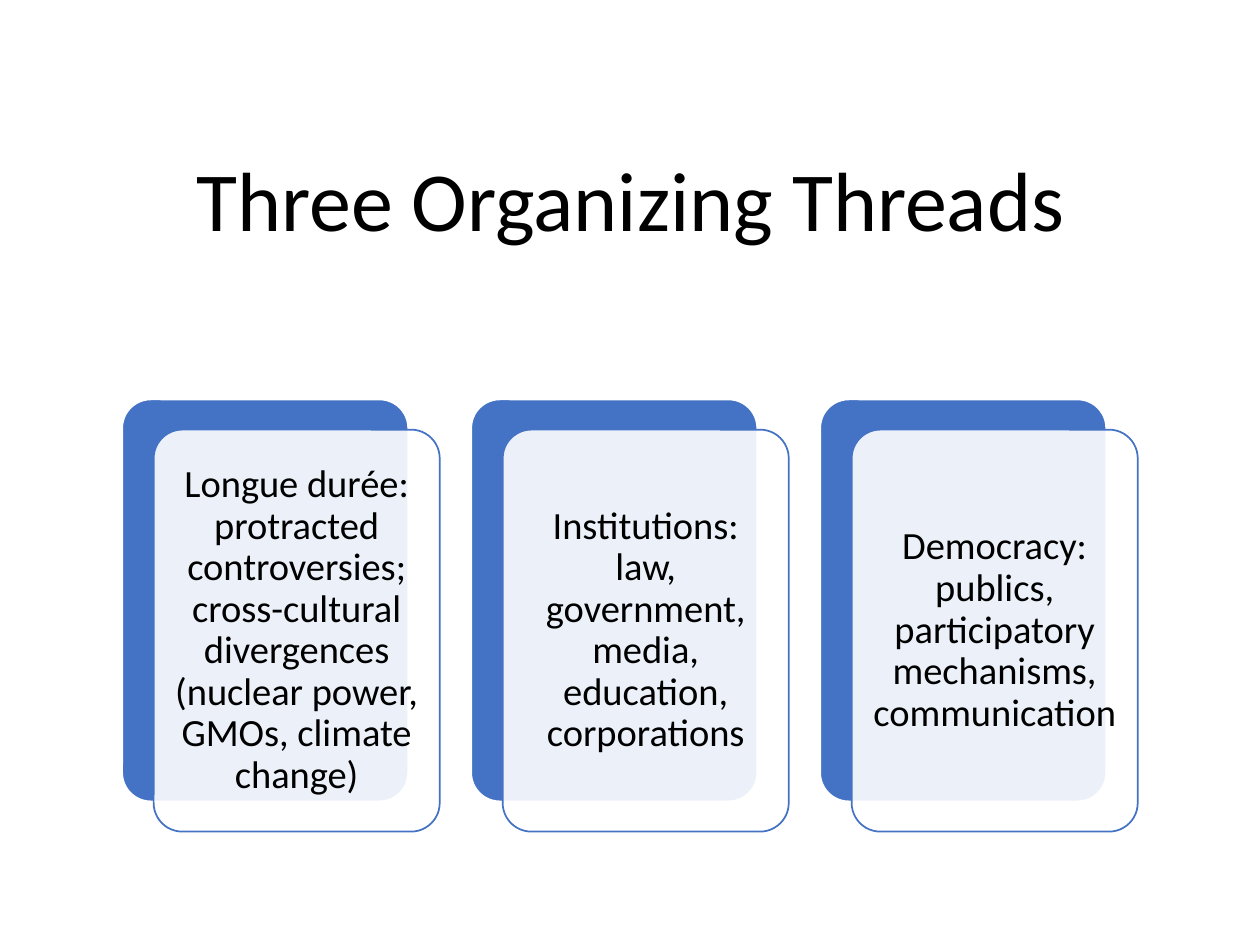
from pptx import Presentation
from pptx.dml.color import RGBColor
from pptx.enum.shapes import MSO_SHAPE
from pptx.enum.text import MSO_ANCHOR, PP_ALIGN
from pptx.oxml.ns import qn
from pptx.util import Inches, Pt
from lxml import etree

ROUNDED = MSO_SHAPE.ROUNDED_RECTANGLE
MIDDLE = MSO_ANCHOR.MIDDLE
CENTER = PP_ALIGN.CENTER

COLORS = {"blue": "4472C4", "white": "FFFFFF", "black": "000000"}
THREADS = [
    "Longue durée: protracted controversies; cross-cultural divergences "
    "(nuclear power, GMOs, climate change)",
    "Institutions: law, government, media, education, corporations",
    "Democracy: publics, participatory mechanisms, communication",
]
LEFT, TOP, PITCH = 0.97, 3.17, 2.77
WIDTH, HEIGHT = 2.27, 3.19
OFFSET_X, OFFSET_Y = 0.25, 0.24


def write_text(shape, text, size, inset):
    frame = shape.text_frame
    frame.word_wrap = True
    frame.vertical_anchor = MIDDLE
    frame.margin_left = frame.margin_right = Inches(inset)
    frame.margin_top = frame.margin_bottom = Inches(inset)
    frame.text = text
    para = frame.paragraphs[0]
    para.alignment = CENTER
    para.line_spacing = 0.9
    span = para.runs[0]
    span.font.name = "Calibri"
    span.font.size = Pt(size)
    span.font.color.rgb = RGBColor.from_string(COLORS["black"])


def add_card(page, left, top, fill, line):
    card = page.shapes.add_shape(
        ROUNDED, Inches(left), Inches(top), Inches(WIDTH), Inches(HEIGHT))
    card.adjustments[0] = 0.1
    card.shadow.inherit = False
    card.fill.solid()
    card.fill.fore_color.rgb = RGBColor.from_string(COLORS[fill])
    card.line.color.rgb = RGBColor.from_string(COLORS[line])
    card.line.width = Pt(1)
    return card


deck = Presentation()
deck.slide_width, deck.slide_height = Inches(10), Inches(7.5)
page = deck.slides.add_slide(deck.slide_layouts[5])

title = page.shapes.title
title.left, title.top = Inches(0.97), Inches(0.9)
title.width, title.height = Inches(8.07), Inches(1.45)
write_text(title, "Three Organizing Threads", size=48, inset=0.05)

for index, thread in enumerate(THREADS):
    left = LEFT + index * PITCH
    add_card(page, left, TOP, fill="blue", line="white")
    front = add_card(page, left + OFFSET_X, TOP + OFFSET_Y, fill="white", line="blue")
    color = front.fill._xPr.find(qn("a:solidFill"))[0]
    etree.SubElement(color, qn("a:alpha")).set("val", "90000")
    write_text(front, thread, size=22, inset=0.09)

deck.save("out.pptx")
